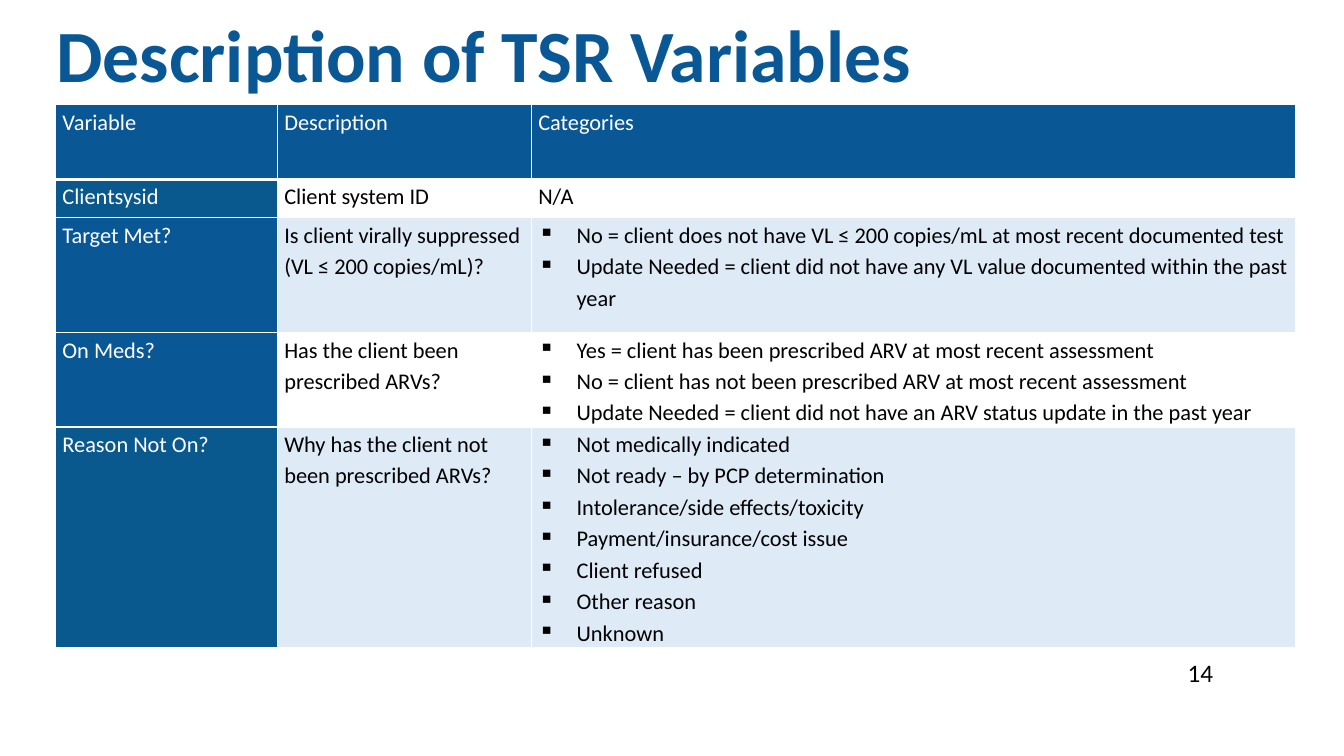
from lxml.etree import SubElement
from pptx import Presentation
from pptx.dml.color import RGBColor
from pptx.enum.text import MSO_ANCHOR as Anchor, PP_ALIGN as Align
from pptx.oxml.ns import qn
from pptx.util import Inches, Pt

BLUE, DEEP_BLUE, PALE_BLUE = "095895", "09588E", "DEEBF7"
WHITE, BLACK = "FFFFFF", "000000"

COLUMN_WIDTHS = [2.2, 2.52, 7.58]
ROW_HEIGHTS = [0.74, 0.38, 1.14, 0.91, 2.07]
HEADINGS = ["Variable", "Description", "Categories"]
VARIABLES = [
    ("Clientsysid", "Client system ID", "N/A"),
    ("Target Met?", "Is client virally suppressed (VL ≤ 200 copies/mL)?", [
        "No = client does not have VL ≤ 200 copies/mL at most recent documented test",
        "Update Needed = client did not have any VL value documented within the past year",
    ]),
    ("On Meds?", "Has the client been prescribed ARVs?", [
        "Yes = client has been prescribed ARV at most recent assessment",
        "No = client has not been prescribed ARV at most recent assessment",
        "Update Needed = client did not have an ARV status update in the past year",
    ]),
    ("Reason Not On?", "Why has the client not been prescribed ARVs?", [
        "Not medically indicated",
        "Not ready – by PCP determination",
        "Intolerance/side effects/toxicity",
        "Payment/insurance/cost issue",
        "Client refused",
        "Other reason",
        "Unknown",
    ]),
]
NAME_FILLS = [DEEP_BLUE, BLUE, BLUE, DEEP_BLUE]
BAND_FILLS = [WHITE, PALE_BLUE]


def rgb(value):
    return RGBColor.from_string(value)


class SlideBuilder:
    font_name = "Calibri"
    table_size = 16

    def __init__(self, page):
        self.page = page

    def style(self, para, size, color, bold=False):
        para.font.name = self.font_name
        para.font.size = Pt(size)
        para.font.bold = bold
        para.font.color.rgb = rgb(color)

    def text(self, content, left, top, width, height, size, color,
             bold=False, anchor=Anchor.TOP, spacing=1.0):
        box = self.page.shapes.add_textbox(
            Inches(left), Inches(top), Inches(width), Inches(height))
        frame = box.text_frame
        frame.word_wrap = True
        frame.vertical_anchor = anchor
        para = frame.paragraphs[0]
        para.text = content
        para.line_spacing = spacing
        self.style(para, size, color, bold)

    def table(self, left, top, widths, heights):
        frame = self.page.shapes.add_table(
            len(heights), len(widths), Inches(left), Inches(top),
            Inches(sum(widths)), Inches(sum(heights)))
        table = frame.table
        for column, width in zip(table.columns, widths):
            column.width = Inches(width)
        for row, height in zip(table.rows, heights):
            row.height = Inches(height)
        return table

    def borders(self, cell, bottom):
        properties = cell._tc.get_or_add_tcPr()
        for side, width in (("L", 1), ("R", 1), ("T", 1), ("B", bottom)):
            line = SubElement(properties, qn(f"a:ln{side}"), w=str(Pt(width)))
            fill = SubElement(line, qn("a:solidFill"))
            SubElement(fill, qn("a:srgbClr"), val=WHITE)

    def bullet(self, para):
        properties = para._p.get_or_add_pPr()
        properties.set("marL", str(Inches(0.38)))
        properties.set("indent", str(Inches(-0.38)))
        SubElement(properties, qn("a:buChar"), char="▪")

    def cell(self, cell, content, fill, color, align=Align.LEFT, bottom=1):
        cell.margin_left = cell.margin_right = Inches(0.07)
        cell.margin_top = cell.margin_bottom = 0
        self.borders(cell, bottom)
        cell.fill.solid()
        cell.fill.fore_color.rgb = rgb(fill)
        bulleted = isinstance(content, list)
        cell.text = "\n".join(content) if bulleted else content
        for para in cell.text_frame.paragraphs:
            if bulleted:
                self.bullet(para)
            para.alignment = align
            para.line_spacing = 1.15
            self.style(para, self.table_size, color)


def main():
    deck = Presentation()
    deck.slide_width, deck.slide_height = Inches(13.33), Inches(7.5)
    builder = SlideBuilder(deck.slides.add_slide(deck.slide_layouts[6]))

    table = builder.table(0.55, 1.04, COLUMN_WIDTHS, ROW_HEIGHTS)
    for column, heading in enumerate(HEADINGS):
        builder.cell(table.cell(0, column), heading, BLUE, WHITE, bottom=3)
    for index, (name, *details) in enumerate(VARIABLES):
        row = index + 1
        align = Align.LEFT if name == "Reason Not On?" else Align.JUSTIFY
        builder.cell(table.cell(row, 0), name, NAME_FILLS[index], WHITE, align)
        for column, detail in enumerate(details, 1):
            builder.cell(table.cell(row, column), detail, BAND_FILLS[index % 2], BLACK)

    builder.text("Description of TSR Variables", 0.46, 0.13, 11.61, 0.91,
                 52.6, BLUE, bold=True, anchor=Anchor.MIDDLE, spacing=0.9)
    builder.text("14", 11.68, 6.47, 1.16, 0.54, 18, BLACK)
    deck.save("out.pptx")


if __name__ == "__main__":
    main()
